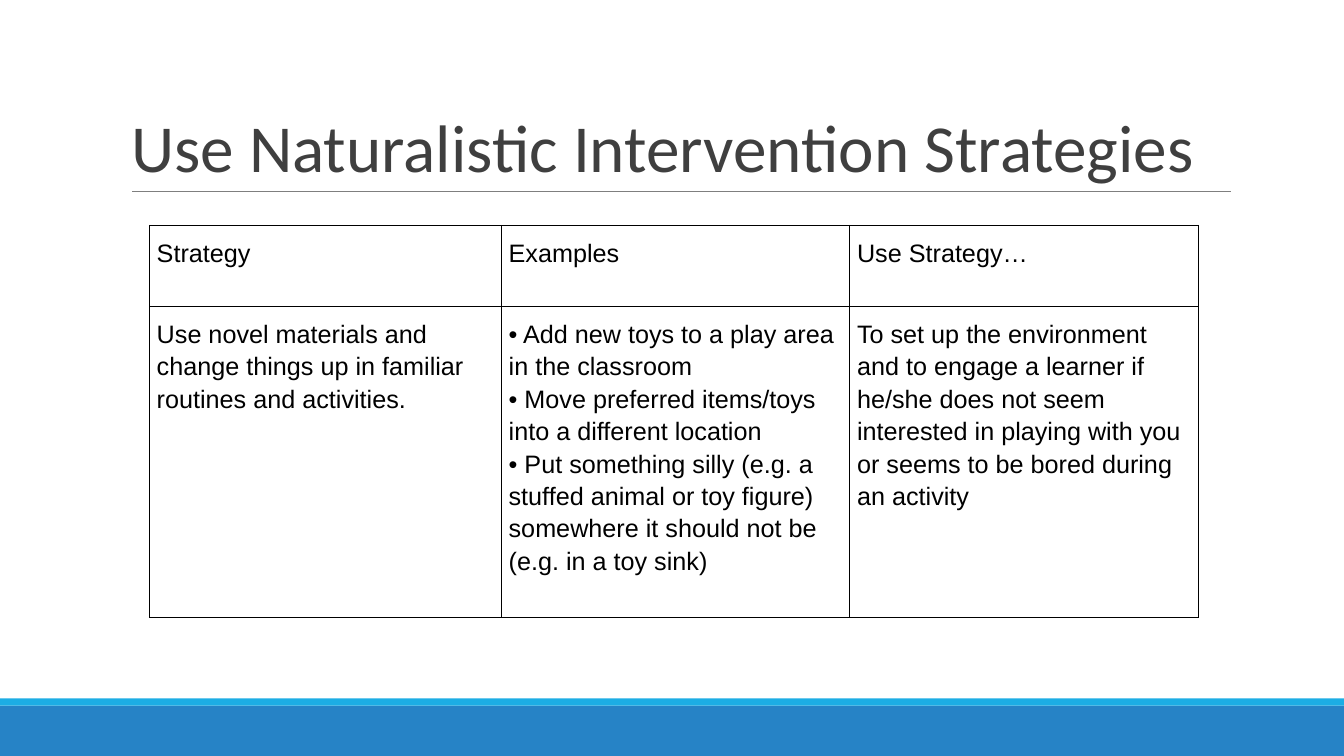
from dataclasses import dataclass

from lxml import etree
from pptx import Presentation
from pptx.dml.color import RGBColor
from pptx.enum.shapes import MSO_CONNECTOR, MSO_SHAPE
from pptx.enum.text import MSO_ANCHOR, MSO_AUTO_SIZE, PP_ALIGN
from pptx.oxml.ns import qn
from pptx.util import Cm, Pt

RECTANGLE = MSO_SHAPE.RECTANGLE
STRAIGHT = MSO_CONNECTOR.STRAIGHT
TOP, BOTTOM = MSO_ANCHOR.TOP, MSO_ANCHOR.BOTTOM
LEFT = PP_ALIGN.LEFT
NO_AUTOFIT = MSO_AUTO_SIZE.NONE

TITLE = "Use Naturalistic Intervention Strategies"
STRATEGY_ROWS = [
    [["Strategy"], ["Examples"], ["Use Strategy…"]],
    [
        ["Use novel materials and change things up in familiar routines and activities."],
        [
            "• Add new toys to a play area in the classroom",
            "• Move preferred items/toys into a different location",
            "• Put something silly (e.g. a stuffed animal or toy figure) "
            "somewhere it should not be (e.g. in a toy sink)",
        ],
        [
            "To set up the environment and to engage a learner if he/she does not seem "
            "interested in playing with you or seems to be bored during an activity"
        ],
    ],
]


@dataclass(frozen=True)
class Theme:
    title_font: str = "Calibri"
    table_font: str = "Arial"
    title_size: int = 48
    table_size: int = 18
    line_width: float = 0.75
    title_color: str = "3F3F3F"
    table_color: str = "000000"
    rule_color: str = "7F7F7F"
    footer_color: str = "2683C6"
    accent_color: str = "1CADE4"


THEME = Theme()
PAGE_WIDTH, PAGE_HEIGHT = Cm(33.87), Cm(19.05)
FOOTER_HEIGHT, ACCENT_HEIGHT = Cm(1.27), Cm(0.18)
TITLE_BOX = Cm(3.05), Cm(0.79), Cm(27.94), Cm(4.04)
RULE_LEFT, RULE_RIGHT, RULE_TOP = Cm(3.33), Cm(31.01), Cm(4.82)
TABLE_LEFT, TABLE_TOP = Cm(3.77), Cm(5.68)
COLUMN_WIDTHS = [Cm(8.87), Cm(8.78), Cm(8.78)]
ROW_HEIGHTS = [Cm(2.04), Cm(7.85)]
CELL_SIDE, CELL_END = Cm(0.18), Cm(0.25)


def add_span(para, text, font, size, color, spacing):
    para.alignment = LEFT
    para.line_spacing = spacing
    para.space_before = para.space_after = Pt(0)
    span = para.add_run()
    span.text = text
    span.font.name = font
    span.font.size = Pt(size)
    span.font.color.rgb = RGBColor.from_string(color)


def add_band(page, top, height, color):
    band = page.shapes.add_shape(RECTANGLE, 0, top, PAGE_WIDTH, height)
    band.shadow.inherit = False
    band.fill.solid()
    band.fill.fore_color.rgb = RGBColor.from_string(color)
    band.line.fill.background()


def add_rule(page):
    rule = page.shapes.add_connector(STRAIGHT, RULE_LEFT, RULE_TOP, RULE_RIGHT, RULE_TOP)
    rule.line.color.rgb = RGBColor.from_string(THEME.rule_color)
    rule.line.width = Pt(THEME.line_width)
    etree.SubElement(rule._element.spPr, qn("a:effectLst"))


def fill_title(page):
    title = page.shapes.title
    title.left, title.top, title.width, title.height = TITLE_BOX
    frame = title.text_frame
    frame.word_wrap = True
    frame.auto_size = NO_AUTOFIT
    frame.vertical_anchor = BOTTOM
    add_span(frame.paragraphs[0], TITLE, THEME.title_font, THEME.title_size,
             THEME.title_color, 0.85)


def add_borders(cell):
    properties = cell._tc.get_or_add_tcPr()
    for position, side in enumerate(("lnL", "lnR", "lnT", "lnB")):
        border = etree.Element(qn(f"a:{side}"), w=str(Pt(THEME.line_width)))
        fill = etree.SubElement(border, qn("a:solidFill"))
        etree.SubElement(fill, qn("a:srgbClr"), val=THEME.table_color)
        properties.insert(position, border)


def fill_cell(cell, lines):
    cell.fill.background()
    cell.vertical_anchor = TOP
    cell.margin_left = cell.margin_right = CELL_SIDE
    cell.margin_top = cell.margin_bottom = CELL_END
    add_borders(cell)
    frame = cell.text_frame
    for index, line in enumerate(lines):
        para = frame.add_paragraph() if index else frame.paragraphs[0]
        add_span(para, line, THEME.table_font, THEME.table_size, THEME.table_color, 1.15)


def add_strategy_table(page):
    table = page.shapes.add_table(
        len(ROW_HEIGHTS), len(COLUMN_WIDTHS), TABLE_LEFT, TABLE_TOP,
        sum(COLUMN_WIDTHS), sum(ROW_HEIGHTS)).table
    table.first_row = table.horz_banding = False
    for column, width in zip(table.columns, COLUMN_WIDTHS):
        column.width = width
    for row, height, contents in zip(table.rows, ROW_HEIGHTS, STRATEGY_ROWS):
        row.height = height
        for cell, lines in zip(row.cells, contents):
            fill_cell(cell, lines)


def main():
    deck = Presentation()
    deck.slide_width, deck.slide_height = PAGE_WIDTH, PAGE_HEIGHT
    page = deck.slides.add_slide(deck.slide_layouts.get_by_name("Title Only"))
    footer_top = PAGE_HEIGHT - FOOTER_HEIGHT
    add_band(page, footer_top, FOOTER_HEIGHT, THEME.footer_color)
    add_band(page, footer_top - ACCENT_HEIGHT, ACCENT_HEIGHT, THEME.accent_color)
    add_rule(page)
    fill_title(page)
    add_strategy_table(page)
    deck.save("out.pptx")


if __name__ == "__main__":
    main()
